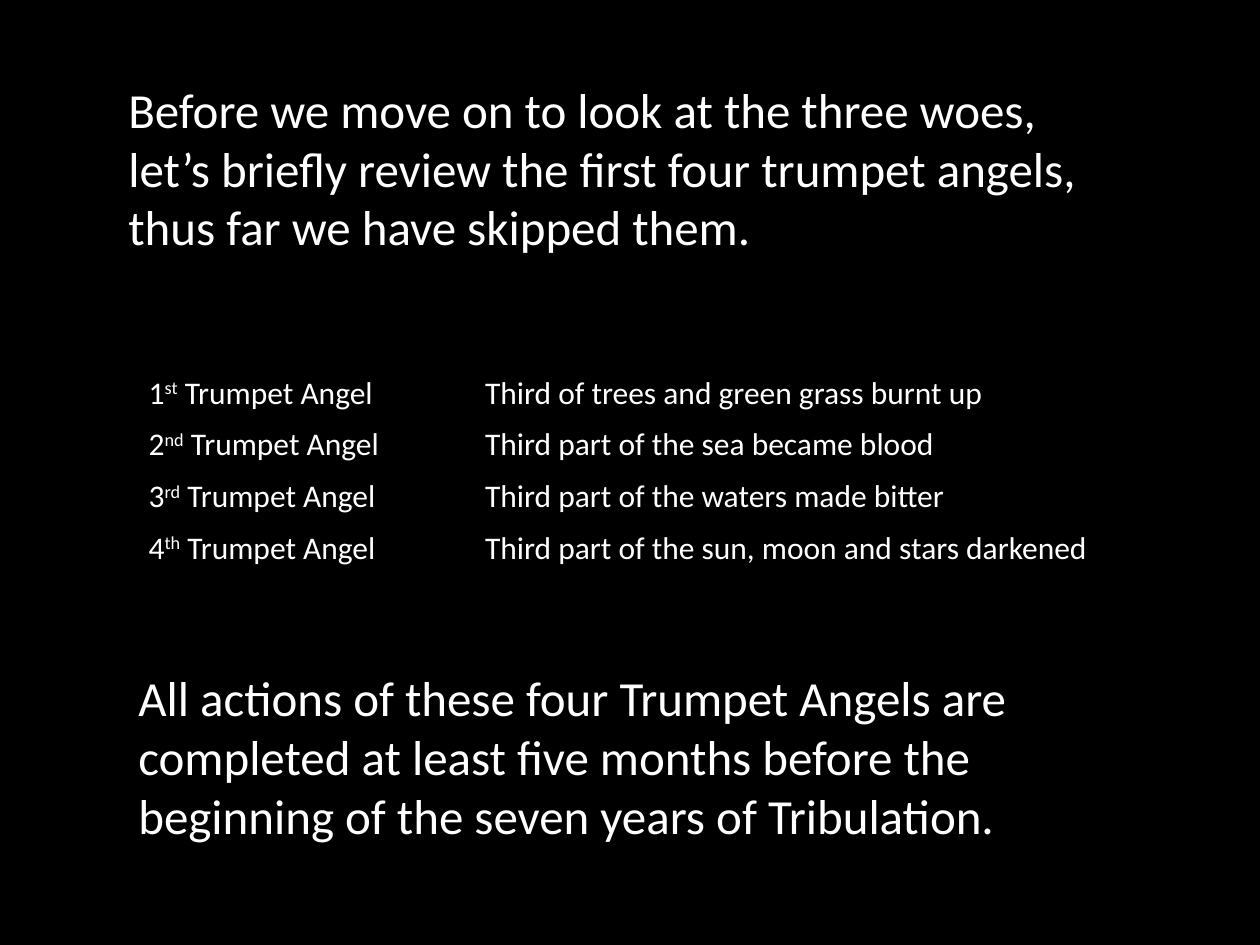
from pptx import Presentation
from pptx.dml.color import RGBColor
from pptx.enum.text import MSO_AUTO_SIZE
from pptx.oxml.ns import qn
from pptx.util import Inches, Pt

GROW = MSO_AUTO_SIZE.SHAPE_TO_FIT_TEXT
BLANK_LAYOUT = 6
PLAIN_TABLE = "{2D5ABB26-0587-4C30-8999-92F81FD0307C}"
SUPERSCRIPT = "30000"

INTRODUCTION = (
    "Before we move on to look at the three woes, let’s briefly review "
    "the first four trumpet angels, thus far we have skipped them."
)
CONCLUSION = (
    "All actions of these four Trumpet Angels are completed at least five "
    "months before the beginning of the seven years of Tribulation."
)
ANGELS = [
    ("1", "st", "Third of trees and green grass burnt up"),
    ("2", "nd", "Third part of the sea became blood"),
    ("3", "rd", "Third part of the waters made bitter"),
    ("4", "th", "Third part of the sun, moon and stars darkened"),
]


def colour(value):
    return RGBColor.from_string(value)


class SlideBuilder:
    font = "Calibri"
    ink = "FFFFFF"
    ground = "000000"
    statement_size = 28
    table_size = 18

    def __init__(self, slide):
        self.slide = slide
        fill = slide.background.fill
        fill.solid()
        fill.fore_color.rgb = colour(self.ground)

    def style(self, para, size):
        for span in para.runs:
            span.font.name = self.font
            span.font.size = Pt(size)
            span.font.color.rgb = colour(self.ink)

    def statement(self, text, left, top, width, height):
        box = self.slide.shapes.add_textbox(
            Inches(left), Inches(top), Inches(width), Inches(height)
        )
        frame = box.text_frame
        frame.word_wrap = True
        frame.auto_size = GROW
        frame.text = text
        self.style(frame.paragraphs[0], self.statement_size)

    def ordinal(self, para, number, suffix, title):
        for text in (number, suffix, f" {title}"):
            para.add_run().text = text
        para.runs[1]._r.get_or_add_rPr().set("baseline", SUPERSCRIPT)

    def angel_table(self, angels, left, top, widths, row_height):
        frame = self.slide.shapes.add_table(
            len(angels), len(widths), Inches(left), Inches(top),
            Inches(sum(widths)), Inches(row_height * len(angels))
        )
        table = frame.table
        table.first_row = False
        table.horz_banding = False
        table._tbl.tblPr.find(qn("a:tableStyleId")).text = PLAIN_TABLE
        for column, width in zip(table.columns, widths):
            column.width = Inches(width)
        for row, (number, suffix, event) in zip(table.rows, angels):
            angel_cell, event_cell = row.cells
            self.ordinal(
                angel_cell.text_frame.paragraphs[0],
                number, suffix, "Trumpet Angel"
            )
            event_cell.text_frame.text = event
            for cell in row.cells:
                cell.fill.background()
                self.style(cell.text_frame.paragraphs[0], self.table_size)


def main():
    deck = Presentation()
    deck.slide_width = Inches(10)
    deck.slide_height = Inches(7.5)
    page = SlideBuilder(deck.slides.add_slide(deck.slide_layouts[BLANK_LAYOUT]))
    page.statement(INTRODUCTION, 0.92, 0.58, 7.75, 1.51)
    page.angel_table(ANGELS, 1.08, 2.92, (2.67, 5.44), 0.41)
    page.statement(CONCLUSION, 1, 5.25, 8.25, 1.82)
    deck.save("out.pptx")


if __name__ == "__main__":
    main()
